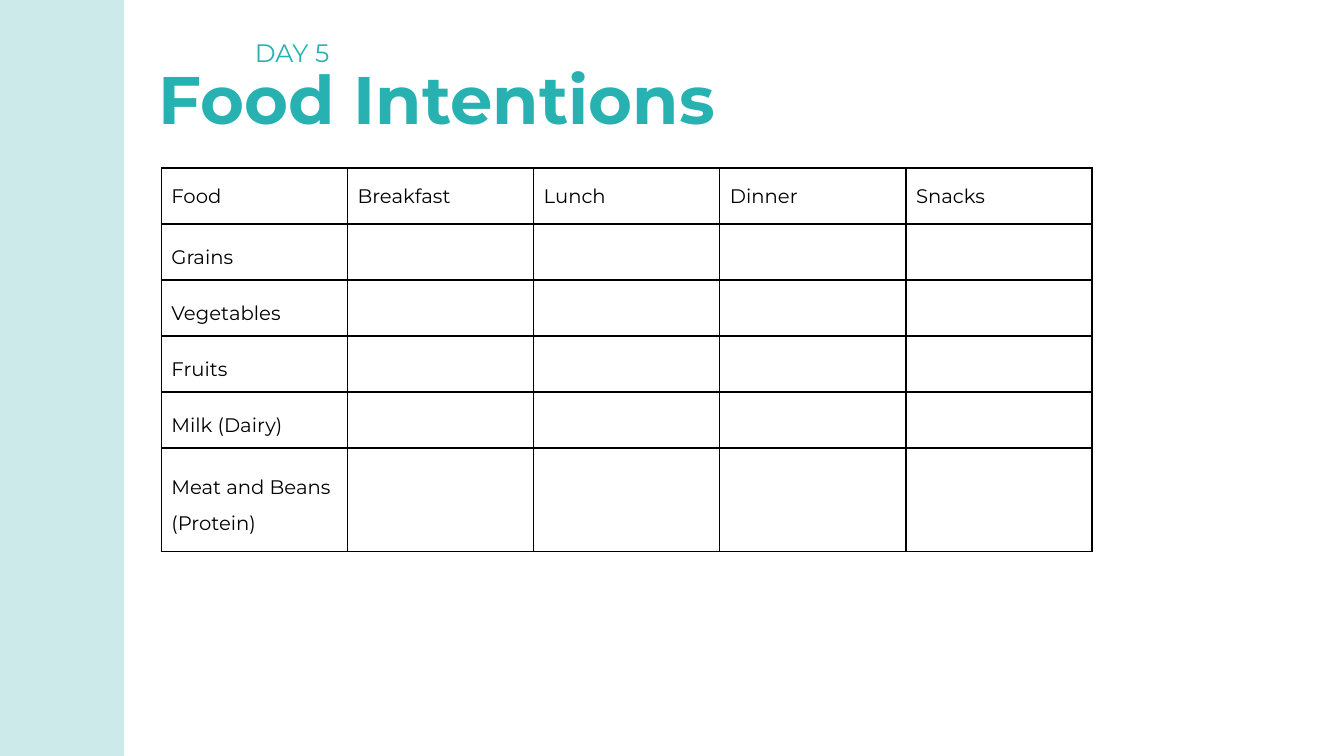
from dataclasses import dataclass

from lxml.etree import SubElement
from pptx import Presentation
from pptx.dml.color import RGBColor
from pptx.enum.shapes import MSO_SHAPE
from pptx.enum.text import MSO_ANCHOR
from pptx.oxml.ns import qn
from pptx.util import Pt


@dataclass(frozen=True)
class Theme:
    font: str = "Montserrat"
    accent: str = "27B2B1"
    band: str = "CCEAEA"
    ink: str = "000000"
    title_size: int = 48
    day_size: int = 18
    table_size: int = 14
    border_width: int = 1


THEME = Theme()
SLIDE_WIDTH, SLIDE_HEIGHT = 960, 540
COLUMN_WIDTH = 133
ROW_HEIGHTS = [40] * 5 + [74]
MEALS = ["Food", "Breakfast", "Lunch", "Dinner", "Snacks"]
FOOD_GROUPS = ["Grains", "Vegetables", "Fruits", "Milk (Dairy)", "Meat and Beans (Protein)"]


def write_text(paragraph, text, size, color, bold=False):
    run = paragraph.add_run()
    run.text = text
    font_format = {"name": THEME.font, "size": Pt(size), "bold": bold}
    for attribute, value in font_format.items():
        setattr(run.font, attribute, value)
    run.font.color.rgb = RGBColor.from_string(color)


def add_band(slide, left, top, width, height):
    band = slide.shapes.add_shape(
        MSO_SHAPE.RECTANGLE, Pt(left), Pt(top), Pt(width), Pt(height))
    band.shadow.inherit = False
    band.fill.solid()
    band.fill.fore_color.rgb = RGBColor.from_string(THEME.band)
    band.line.fill.background()


def add_heading(slide, text, box, size, bold=False):
    heading = slide.shapes.add_textbox(*map(Pt, box))
    heading.text_frame.word_wrap = True
    write_text(heading.text_frame.paragraphs[0], text, size, THEME.accent, bold)


def add_borders(cell):
    properties = cell._tc.get_or_add_tcPr()
    for side in ("lnL", "lnR", "lnT", "lnB"):
        line = SubElement(properties, qn(f"a:{side}"), w=str(Pt(THEME.border_width)))
        fill = SubElement(line, qn("a:solidFill"))
        SubElement(fill, qn("a:srgbClr"), val=THEME.ink)


def fill_cell(cell, text, anchor):
    add_borders(cell)
    cell.fill.background()
    cell.vertical_anchor = anchor
    if text:
        paragraph = cell.text_frame.paragraphs[0]
        paragraph.line_spacing = 1.5
        write_text(paragraph, text, THEME.table_size, THEME.ink)


def add_meal_table(slide, left, top):
    """Add the grid of food groups by meal, with its body left blank."""
    rows = [MEALS] + [[group] + [""] * (len(MEALS) - 1) for group in FOOD_GROUPS]
    table = slide.shapes.add_table(
        len(rows), len(MEALS), Pt(left), Pt(top),
        Pt(COLUMN_WIDTH * len(MEALS)), Pt(sum(ROW_HEIGHTS))).table
    table.first_row = False
    table.horz_banding = False
    for column in table.columns:
        column.width = Pt(COLUMN_WIDTH)
    for row_index, (texts, height) in enumerate(zip(rows, ROW_HEIGHTS)):
        table.rows[row_index].height = Pt(height)
        anchor = MSO_ANCHOR.MIDDLE if row_index else MSO_ANCHOR.TOP
        for column_index, text in enumerate(texts):
            fill_cell(table.cell(row_index, column_index), text, anchor)


def main():
    presentation = Presentation()
    presentation.slide_width = Pt(SLIDE_WIDTH)
    presentation.slide_height = Pt(SLIDE_HEIGHT)
    slide = presentation.slides.add_slide(presentation.slide_layouts[6])
    add_meal_table(slide, 115.2, 120)
    add_heading(slide, "DAY 5", (175, 23, 113, 29), THEME.day_size)
    add_heading(slide, "Food Intentions", (106, 37.5, 472, 65.5), THEME.title_size, bold=True)
    add_band(slide, 0, 0, 88.5, SLIDE_HEIGHT)
    presentation.save("out.pptx")


if __name__ == "__main__":
    main()
